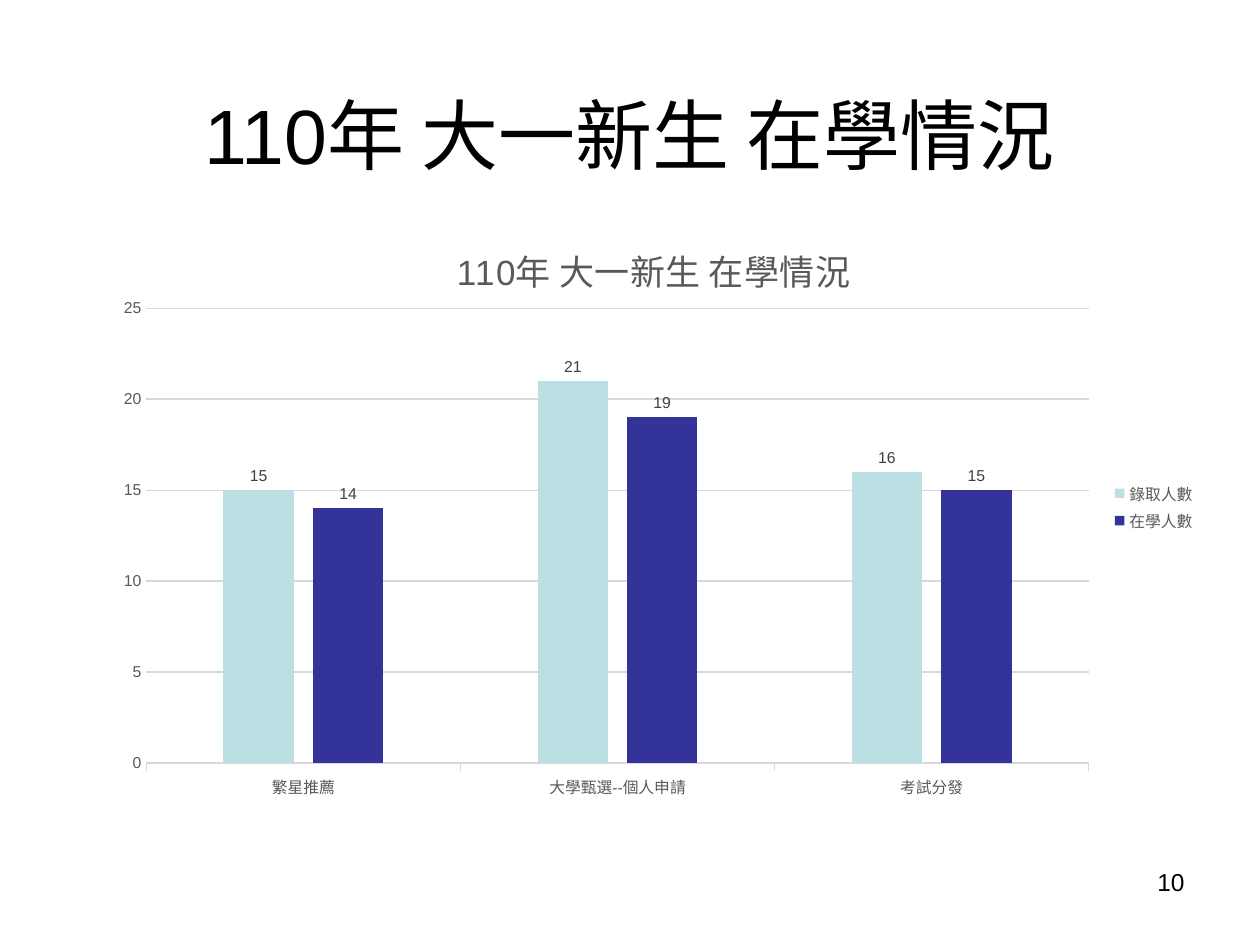
from lxml import etree
from pptx import Presentation
from pptx.chart.data import CategoryChartData
from pptx.dml.color import RGBColor
from pptx.enum.chart import XL_CHART_TYPE, XL_LABEL_POSITION, XL_LEGEND_POSITION, XL_TICK_MARK
from pptx.enum.text import MSO_ANCHOR, PP_ALIGN
from pptx.oxml.ns import qn
from pptx.util import Emu, Pt

PX = 914400 / 126
FONT = "Arial"
COLORS = {
    "text": "000000",
    "muted": "595959",
    "label": "404040",
    "grid": "D9D9D9",
    "admitted": "BBE0E3",
    "enrolled": "333399",
}
COLUMNS = XL_CHART_TYPE.COLUMN_CLUSTERED
OUTSIDE_END = XL_LABEL_POSITION.OUTSIDE_END
LEGEND_RIGHT = XL_LEGEND_POSITION.RIGHT
TICK_NONE, TICK_OUT = XL_TICK_MARK.NONE, XL_TICK_MARK.OUTSIDE
CENTER, RIGHT = PP_ALIGN.CENTER, PP_ALIGN.RIGHT
TOP, MIDDLE = MSO_ANCHOR.TOP, MSO_ANCHOR.MIDDLE

HEADING = "110年 大一新生 在學情況"
CATEGORIES = ["繁星推薦", "大學甄選--個人申請", "考試分發"]
SERIES = [
    ("錄取人數", [15, 21, 16], "admitted"),
    ("在學人數", [14, 19, 15], "enrolled"),
]


def px(length):
    return Emu(round(length * PX))


def rgb(name):
    return RGBColor.from_string(COLORS[name])


def style_font(font, size, color):
    font.name = FONT
    font.size = Pt(size)
    font.bold = False
    font.color.rgb = rgb(color)


def write_text(frame, text, size=14, color="text", align=CENTER):
    para = frame.paragraphs[0]
    para.alignment = align
    span = para.add_run()
    span.text = text
    style_font(span.font, size, color)


def place(parent, after, **settings):
    """Give a chart part a manual layout, as fractions of the chart."""
    for old in parent.findall(qn("c:layout")):
        parent.remove(old)
    layout = etree.Element(qn("c:layout"))
    manual = etree.SubElement(layout, qn("c:manualLayout"))
    for tag, value in settings.items():
        etree.SubElement(manual, qn(f"c:{tag}")).set("val", str(value))
    if after is None:
        parent.insert(0, layout)
    else:
        after.addnext(layout)


class Page:
    def __init__(self, deck):
        self.slide = deck.slides.add_slide(deck.slide_layouts[6])

    def text(self, text, left, top, width, height, anchor=TOP, **style):
        box = self.slide.shapes.add_textbox(px(left), px(top), px(width), px(height))
        box.text_frame.word_wrap = True
        box.text_frame.vertical_anchor = anchor
        write_text(box.text_frame, text, **style)

    def chart(self, title, left, top, width, height):
        data = CategoryChartData()
        data.categories = CATEGORIES
        for name, values, _ in SERIES:
            data.add_series(name, values)
        chart = self.slide.shapes.add_chart(
            COLUMNS, px(left), px(top), px(width), px(height), data
        ).chart
        style_font(chart.font, 10, "text")

        chart.has_title = True
        write_text(chart.chart_title.text_frame, title, size=20, color="muted")
        chart.chart_title.include_in_layout = False
        heading = chart._chartSpace.chart.find(qn("c:title"))
        place(heading, heading.find(qn("c:tx")),
              xMode="edge", yMode="edge", x=0.32, y=0.05)
        place(chart._chartSpace.chart.plotArea, None,
              layoutTarget="inner", xMode="edge", yMode="edge",
              x=round(52 / width, 3), y=round(104 / height, 3),
              w=round(942 / width, 3), h=round(455 / height, 3))

        chart.has_legend = True
        chart.legend.position = LEGEND_RIGHT
        chart.legend.include_in_layout = False
        style_font(chart.legend.font, 9, "muted")
        self.axes(chart)
        self.columns(chart.plots[0])

    def axes(self, chart):
        category, value = chart.category_axis, chart.value_axis
        for axis in (category, value):
            style_font(axis.tick_labels.font, 9, "muted")
        category.major_tick_mark = TICK_OUT
        value.major_tick_mark = TICK_NONE
        value.minimum_scale, value.maximum_scale, value.major_unit = 0, 25, 5
        value.format.line.fill.background()
        for line in (category.format.line, value.major_gridlines.format.line):
            line.color.rgb = rgb("grid")
            line.width = Pt(0.75)

    def columns(self, plot):
        plot.gap_width, plot.overlap = 219, -27
        plot.vary_by_categories = False
        for series, (_, _, color) in zip(plot.series, SERIES):
            series.format.fill.solid()
            series.format.fill.fore_color.rgb = rgb(color)
            labels = series.data_labels
            labels.show_value = True
            labels.position = OUTSIDE_END
            style_font(labels.font, 9, "label")


def main():
    deck = Presentation()
    deck.slide_width, deck.slide_height = px(1260), px(945)
    page = Page(deck)
    page.text(HEADING, 63, 55, 1134, 158, anchor=MIDDLE, size=44)
    page.text("10", 903, 861, 294, 66, align=RIGHT)
    page.chart(HEADING, 94, 204, 1114, 606)
    deck.save("out.pptx")


if __name__ == "__main__":
    main()
